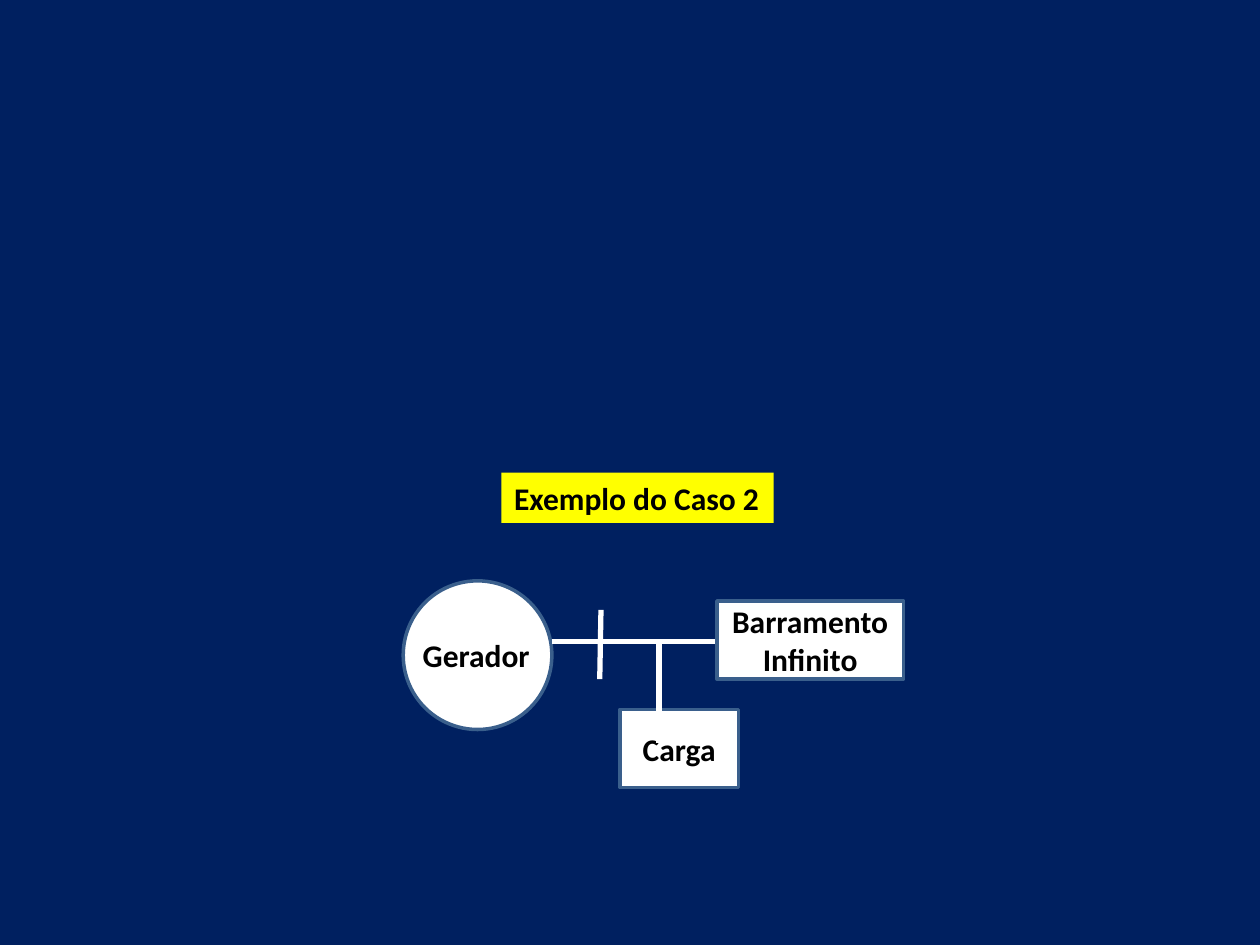
from typing import NamedTuple

from lxml.etree import SubElement
from pptx import Presentation
from pptx.dml.color import RGBColor
from pptx.enum.shapes import MSO_CONNECTOR, MSO_SHAPE
from pptx.enum.text import MSO_ANCHOR, MSO_AUTO_SIZE, PP_ALIGN
from pptx.oxml.ns import qn
from pptx.util import Inches, Pt

NAVY, YELLOW, WHITE, BLACK, STEEL = "002060", "FFFF00", "FFFFFF", "000000", "3A5F8C"


class Block(NamedTuple):
    kind: MSO_SHAPE
    left: float
    top: float
    width: float
    height: float
    lines: tuple[str, ...] = ()


class Wire(NamedTuple):
    x1: float
    y1: float
    x2: float
    y2: float


GENERATOR = Block(MSO_SHAPE.OVAL, 3.2, 4.61, 1.18, 1.18)
LOAD = Block(MSO_SHAPE.RECTANGLE, 4.92, 5.63, 0.94, 0.62, ("Carga",))
INFINITE_BUS = Block(MSO_SHAPE.RECTANGLE, 5.69, 4.77, 1.48, 0.62, ("Barramento", "Infinito"))
MAIN_WIRE = Wire(4.38, 5.09, 6.04, 5.09)
BUSBAR = Wire(4.77, 4.84, 4.76, 5.39)
LOAD_WIRE = Wire(5.23, 5.9, 5.23, 5.08)


def rgb(value: str) -> RGBColor:
    return RGBColor.from_string(value)


def fill(target, color: str) -> None:
    target.fill.solid()
    target.fill.fore_color.rgb = rgb(color)


def write(frame, lines: tuple[str, ...], align=PP_ALIGN.CENTER) -> None:
    for index, line in enumerate(lines):
        paragraph = frame.add_paragraph() if index else frame.paragraphs[0]
        paragraph.alignment = align
        run = paragraph.add_run()
        run.text = line
        run.font.name = "Calibri"
        run.font.size = Pt(18)
        run.font.bold = True
        run.font.color.rgb = rgb(BLACK)


def draw_block(slide, block: Block) -> None:
    box = map(Inches, (block.left, block.top, block.width, block.height))
    shape = slide.shapes.add_shape(block.kind, *box)
    shape.shadow.inherit = False
    fill(shape, WHITE)
    shape.line.color.rgb = rgb(STEEL)
    shape.line.width = Pt(2)
    shape.text_frame.vertical_anchor = MSO_ANCHOR.MIDDLE
    write(shape.text_frame, block.lines)


def draw_wire(slide, wire: Wire) -> None:
    line = slide.shapes.add_connector(MSO_CONNECTOR.STRAIGHT, *map(Inches, wire))
    line.line.color.rgb = rgb(WHITE)
    line.line.width = Pt(3)
    SubElement(line._element.spPr, qn("a:effectLst"))


def draw_title(slide) -> None:
    title = slide.shapes.title
    title.left, title.top, title.width, title.height = map(Inches, (3.98, 3.75, 2.16, 0.4))
    fill(title, YELLOW)
    frame = title.text_frame
    frame.vertical_anchor = MSO_ANCHOR.TOP
    frame.word_wrap = False
    frame.auto_size = MSO_AUTO_SIZE.NONE
    write(frame, ("Exemplo do Caso 2",), PP_ALIGN.LEFT)


def draw_generator_label(slide) -> None:
    label = slide.shapes.add_textbox(*map(Inches, (3.25, 5, 1.06, 0.4)))
    label.text_frame.word_wrap = False
    label.text_frame.auto_size = MSO_AUTO_SIZE.SHAPE_TO_FIT_TEXT
    write(label.text_frame, ("Gerador",))


def main() -> None:
    deck = Presentation()
    deck.slide_width, deck.slide_height = Inches(10), Inches(7.5)
    slide = deck.slides.add_slide(deck.slide_layouts[5])
    fill(slide.background, NAVY)

    draw_title(slide)
    draw_block(slide, GENERATOR)
    draw_wire(slide, MAIN_WIRE)
    draw_block(slide, LOAD)
    draw_generator_label(slide)
    draw_wire(slide, BUSBAR)
    draw_wire(slide, LOAD_WIRE)
    draw_block(slide, INFINITE_BUS)
    deck.save("out.pptx")


if __name__ == "__main__":
    main()
